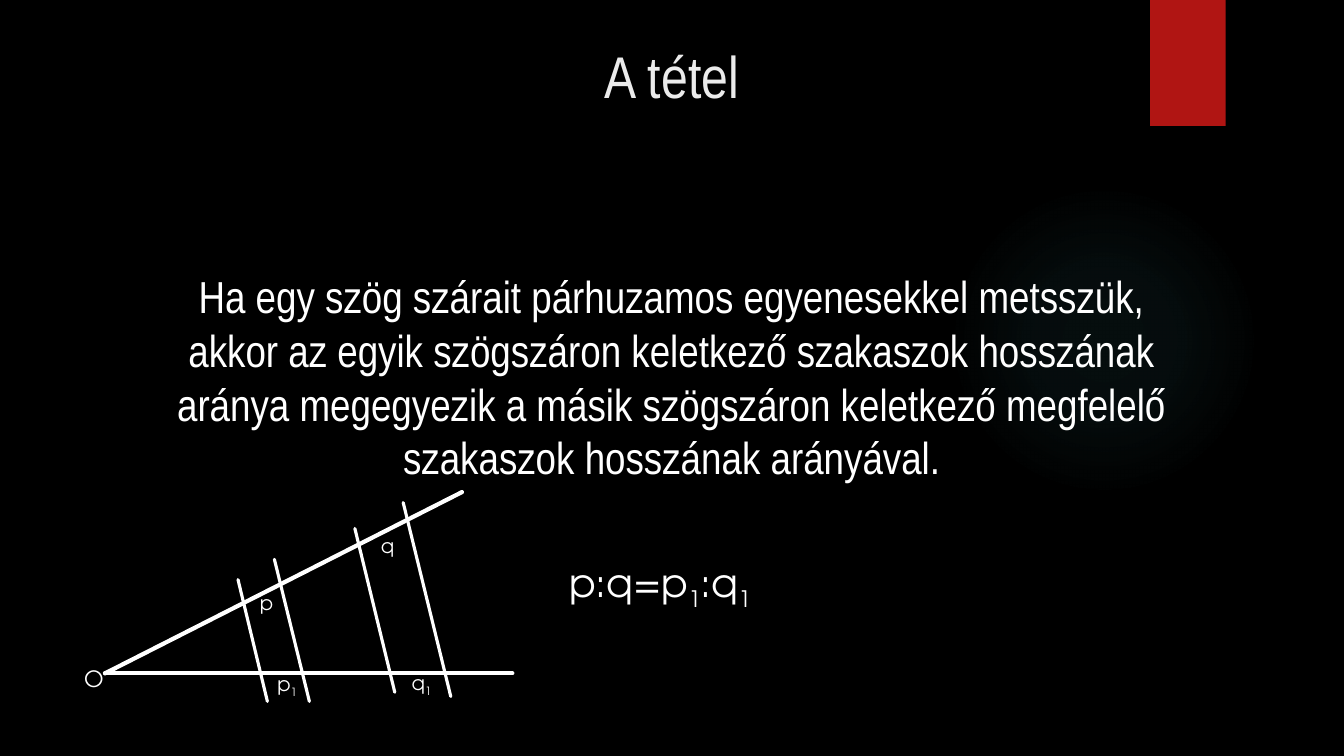
from lxml import etree
from pptx import Presentation
from pptx.dml.color import RGBColor
from pptx.enum.shapes import MSO_CONNECTOR, MSO_SHAPE
from pptx.enum.text import MSO_ANCHOR, PP_ALIGN
from pptx.oxml import parse_xml
from pptx.oxml.ns import qn
from pptx.util import Pt

STRAIGHT = MSO_CONNECTOR.STRAIGHT
OVAL, RECT = MSO_SHAPE.OVAL, MSO_SHAPE.RECTANGLE
TOP = MSO_ANCHOR.TOP
LEFT, CENTER = PP_ALIGN.LEFT, PP_ALIGN.CENTER
NARROW, ROUND = "Arial Narrow", "TeX Gyre Adventor"
WHITE = "FFFFFF"
NS = "http://schemas.openxmlformats.org/drawingml/2006/main"
RAYS = [(277, 0.5), (313, 130)]
CUTS = [(138, 150, 117, 63), (229, 143.5, 200.5, 26.5),
        (168, 150, 143, 48.5), (269, 146.5, 235, 8)]
LABELS = [("O", 0, 120.5, 24, 16), ("q_1", 234, 125, 44, 14),
          ("p_1", 138, 125.5, 44, 14), ("q", 212, 27, 24, 14),
          ("p", 125.5, 67.5, 24, 14)]


def color(code):
    """Turn a hex string into a colour."""
    return RGBColor.from_string(code)


def place(item, box):
    """Move and size an item to a box in points."""
    for name, value in zip(("left", "top", "width", "height"), box):
        setattr(item, name, Pt(value))


def write(item, text, face, size, align=LEFT, code=WHITE):
    """Fill an item with text, where _1 stands for a lowered 1."""
    frame = item.text_frame
    frame.word_wrap, frame.vertical_anchor = True, TOP
    para = frame.paragraphs[0]
    para.alignment = align
    style = {"name": face, "size": Pt(size), "bold": False}
    for part in text.replace("_1", "|_1|").split("|"):
        if not part:
            continue
        run = para.add_run()
        run.text = part.lstrip("_")
        for name, value in style.items():
            setattr(run.font, name, value)
        run.font.color.rgb = color(code)
        if part.startswith("_"):
            run._r.get_or_add_rPr().set("baseline", "-25000")


def label(slide, box, *style):
    """Add a text box."""
    item = slide.shapes.add_textbox(*map(Pt, box))
    write(item, *style)


def stroke(shapes, ends, width):
    """Draw one white line with round ends."""
    line = shapes.add_connector(STRAIGHT, *map(Pt, ends))
    line.line.color.rgb = color(WHITE)
    line.line.width = Pt(width)
    props = line._element.spPr
    props.get_or_add_ln().set("cap", "rnd")
    etree.SubElement(props, qn("a:effectLst"))


def solid(slide, kind, box, code):
    """Add a plain filled shape."""
    item = slide.shapes.add_shape(kind, *map(Pt, box))
    item.shadow.inherit = False
    item.fill.solid()
    item.fill.fore_color.rgb = color(code)
    item.line.fill.background()
    return item


def glow(slide, box):
    """Add a faint round glow that fades outward."""
    props = solid(slide, OVAL, box, "50B9C1")._element.spPr
    stops = "".join(
        f'<a:gs pos="{spot}000"><a:srgbClr val="50B9C1">'
        f'<a:alpha val="{alpha}000"/></a:srgbClr></a:gs>'
        for spot, alpha in ((0, 7), (36, 6), (69, 0)))
    fade = parse_xml(
        f'<a:gradFill xmlns:a="{NS}"><a:gsLst>{stops}</a:gsLst>'
        '<a:path path="circle"><a:fillToRect l="50000" t="50000" '
        'r="50000" b="50000"/></a:path></a:gradFill>')
    props.replace(props.find(qn("a:solidFill")), fade)


def head(slide, box):
    """Set the slide title."""
    title = slide.shapes.title
    place(title, box)
    write(title, "A tétel", NARROW, 42, CENTER, "EBEBEB")


def figure(slide, left, top):
    """Draw the angle, the parallels that cut it and their labels."""
    rays = slide.shapes.add_group_shape().shapes
    for x, y in RAYS:
        stroke(rays, (left + 22, top + 130, left + x, top + y), 3)
    for x1, y1, x2, y2 in CUTS:
        stroke(slide.shapes, (left + x1, top + y1, left + x2, top + y2), 2.25)
    for text, x, y, width, size in LABELS:
        label(slide, (left + x, top + y, width, 24.5), text, ROUND, size)


def main():
    """Build and save the slide."""
    deck = Presentation()
    deck.slide_width, deck.slide_height = Pt(960), Pt(540)
    slide = deck.slides.add_slide(deck.slide_layouts[5])
    back = slide.background.fill
    back.solid()
    back.fore_color.rgb = color("000000")
    glow(slide, (677.5, 132, 222, 222))
    solid(slide, RECT, (821.5, 0, 54, 90), "B01513")
    head(slide, (66, 25, 828, 104.5))
    label(slide, (99.5, 188.5, 761, 163),
          "Ha egy szög szárait párhuzamos egyenesekkel metsszük, akkor az "
          "egyik szögszáron keletkező szakaszok hosszának aránya megegyezik "
          "a másik szögszáron keletkező megfelelő szakaszok hosszának "
          "arányával.", NARROW, 32, CENTER)
    figure(slide, 53, 351)
    label(slide, (399.5, 395.5, 212.5, 41), "p:q=p_1:q_1", ROUND, 28)
    deck.save("out.pptx")


if __name__ == "__main__":
    main()
